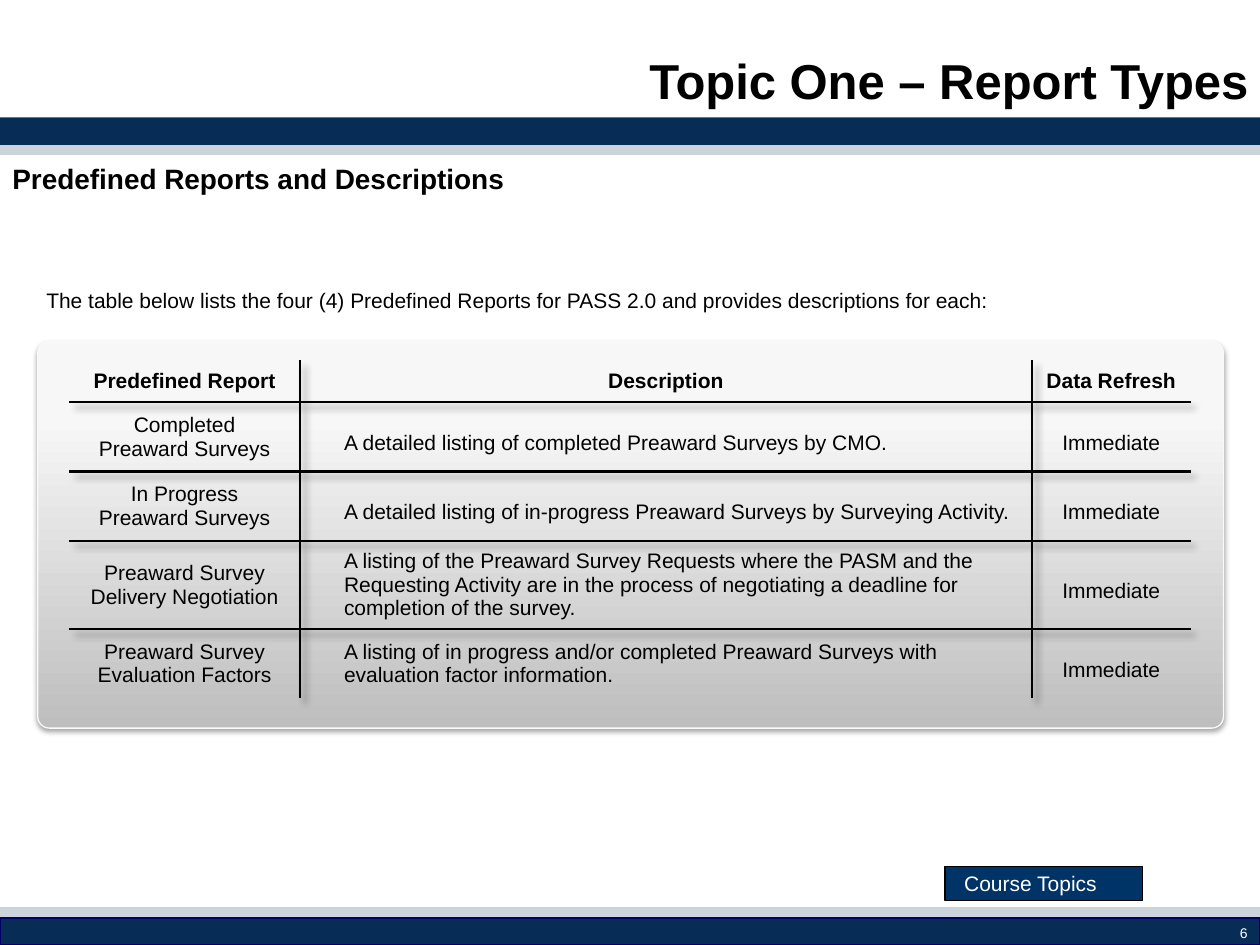
from lxml import etree
from pptx import Presentation
from pptx.dml.color import RGBColor
from pptx.enum.shapes import MSO_SHAPE
from pptx.enum.text import MSO_ANCHOR, PP_ALIGN
from pptx.oxml import parse_xml
from pptx.oxml.ns import qn
from pptx.util import Pt

RECT, ROUNDED = MSO_SHAPE.RECTANGLE, MSO_SHAPE.ROUNDED_RECTANGLE
LEFT, CENTER, RIGHT = PP_ALIGN.LEFT, PP_ALIGN.CENTER, PP_ALIGN.RIGHT
TOP, MIDDLE, BOTTOM = MSO_ANCHOR.TOP, MSO_ANCHOR.MIDDLE, MSO_ANCHOR.BOTTOM
NS = 'xmlns:a="http://schemas.openxmlformats.org/drawingml/2006/main"'
FONT = "Arial"
COLORS = {
    "black": "000000", "white": "FFFFFF", "navy": "072C55", "pale": "CCD4DB",
    "navy_line": "000066", "button": "003366", "panel_line": "F9F9F9",
}
PANEL_STOPS = [(0, "BEBEBE"), (80, "F7F7F7"), (100, "F8F8F8")]
COL_WIDTHS = [131.8, 418.3, 90.7]
ROW_HEIGHTS = [24, 39.6, 39.6, 50, 39.6]
HEADERS = ["Predefined Report", "Description", "Data Refresh"]
REPORTS = [
    (["Completed", "Preaward Surveys"],
     "A detailed listing of completed Preaward Surveys by CMO.", 1.5),
    (["In Progress", "Preaward Surveys"],
     "A detailed listing of in-progress Preaward Surveys by Surveying Activity.", 1.5),
    (["Preaward Survey", "Delivery Negotiation"],
     "A listing of the Preaward Survey Requests where the PASM and the Requesting "
     "Activity are in the process of negotiating a deadline for completion of the survey.", 1),
    (["Preaward Survey Evaluation Factors"],
     "A listing of in progress and/or completed Preaward Surveys with "
     "evaluation factor information.", 1),
]


def rgb(name):
    return RGBColor.from_string(COLORS[name])


def write(tf, lines, size=12, color="black", bold=False, align=LEFT, spacing=None):
    for i, line in enumerate(lines):
        p = tf.paragraphs[0] if i == 0 else tf.add_paragraph()
        p.text = line
        p.alignment = align
        p.line_spacing = spacing
        p.font.name = FONT
        p.font.size = Pt(size)
        p.font.bold = bold
        p.font.color.rgb = rgb(color)


def add_box(s, box, fill=None, line=None, shape=RECT):
    sp = s.shapes.add_shape(shape, *map(Pt, box))
    sp.shadow.inherit = False
    if fill:
        sp.fill.solid()
        sp.fill.fore_color.rgb = rgb(fill)
    if line:
        sp.line.color.rgb = rgb(line)
        sp.line.width = Pt(0.75)
    else:
        sp.line.fill.background()
    return sp


def add_text(s, box, text, anchor=TOP, **style):
    tf = s.shapes.add_textbox(*map(Pt, box)).text_frame
    tf.word_wrap = True
    tf.vertical_anchor = anchor
    write(tf, [text], **style)


def add_shadow(effects, blur, dist, angle, alpha):
    effects.append(parse_xml(
        f'<a:outerShdw {NS} blurRad="{Pt(blur)}" dist="{Pt(dist)}" dir="{angle * 60000}" '
        f'rotWithShape="0"><a:srgbClr val="{COLORS["black"]}">'
        f'<a:alpha val="{alpha * 1000}"/></a:srgbClr></a:outerShdw>'))


def add_panel(s):
    sp = add_box(s, (21.6, 195.1, 677.5, 221), line="panel_line", shape=ROUNDED)
    sp.adjustments[0] = 0.03
    sp.fill.background()
    stops = "".join(f'<a:gs pos="{pos * 1000}"><a:srgbClr val="{color}"/></a:gs>'
                    for pos, color in PANEL_STOPS)
    props = sp._element.spPr
    props.replace(props.find(qn("a:noFill")), parse_xml(
        f'<a:gradFill {NS} rotWithShape="1"><a:gsLst>{stops}</a:gsLst>'
        '<a:lin ang="16200000" scaled="0"/></a:gradFill>'))
    add_shadow(props.find(qn("a:effectLst")), 3.1, 1.8, 90, 35)


def set_borders(cell, visible):
    props = cell._tc.get_or_add_tcPr()
    for i, side in enumerate("LRTB"):
        paint = (f'<a:solidFill><a:srgbClr val="{COLORS["black"]}"/></a:solidFill>'
                 if side in visible else "<a:noFill/>")
        props.insert(i, parse_xml(f'<a:ln{side} {NS} w="{Pt(1.5)}">{paint}</a:ln{side}>'))


def add_report_table(s):
    rows, cols = len(ROW_HEIGHTS), len(COL_WIDTHS)
    frame = s.shapes.add_table(rows, cols, Pt(39.6), Pt(205.9),
                               Pt(sum(COL_WIDTHS)), Pt(sum(ROW_HEIGHTS)))
    table = frame.table
    table.first_row = table.horz_banding = False
    effects = etree.Element(qn("a:effectLst"))
    table._tbl.tblPr.insert(0, effects)
    add_shadow(effects, 4, 4, 45, 40)
    for col, width in zip(table.columns, COL_WIDTHS):
        col.width = Pt(width)
    for row, height in zip(table.rows, ROW_HEIGHTS):
        row.height = Pt(height)

    for r in range(rows):
        for c in range(cols):
            cell = table.cell(r, c)
            cell.fill.background()
            cell.vertical_anchor = MIDDLE
            inner = {"L": c > 0, "R": c < cols - 1, "T": r > 0, "B": r < rows - 1}
            set_borders(cell, [side for side in inner if inner[side]])

    for c, header in enumerate(HEADERS):
        write(table.cell(0, c).text_frame, [header], bold=True, align=CENTER)
    for r, (name, description, spacing) in enumerate(REPORTS, 1):
        write(table.cell(r, 0).text_frame, name, align=CENTER)
        cell = table.cell(r, 1)
        cell.margin_left = Pt(25.2)
        write(cell.text_frame, [description], spacing=spacing)
        write(table.cell(r, 2).text_frame, ["Immediate"], align=CENTER, spacing=1.5)


def add_button(s):
    sp = add_box(s, (540, 495.2, 113, 19.4), "button", "black")
    tf = sp.text_frame
    tf.margin_left = Pt(11)
    tf.vertical_anchor = MIDDLE
    write(tf, ["Course Topics"], color="white")


def main():
    prs = Presentation()
    prs.slide_width, prs.slide_height = Pt(720), Pt(540)
    s = prs.slides.add_slide(prs.slide_layouts[6])
    add_box(s, (0, 81.4, 720, 7.2), "pale")
    add_box(s, (0, 67, 720, 15.8), "navy")
    add_box(s, (0, 518.4, 720, 6), "pale")
    add_box(s, (0, 524.6, 720, 15.4), "navy", "navy_line")
    add_panel(s)
    add_text(s, (552.2, 524.9, 167.8, 15.1), "6", size=8, color="white", align=RIGHT)
    add_text(s, (169.2, 13, 551.2, 53.3), "Topic One – Report Types",
             anchor=BOTTOM, size=28, bold=True, align=RIGHT)
    add_text(s, (0, 88.6, 332.6, 26.6), "Predefined Reports and Descriptions",
             size=16, bold=True)
    add_text(s, (19.4, 160.6, 700.6, 21.6),
             "The table below lists the four (4) Predefined Reports for PASS 2.0 "
             "and provides descriptions for each:")
    add_button(s)
    add_report_table(s)
    prs.save("out.pptx")


if __name__ == "__main__":
    main()
